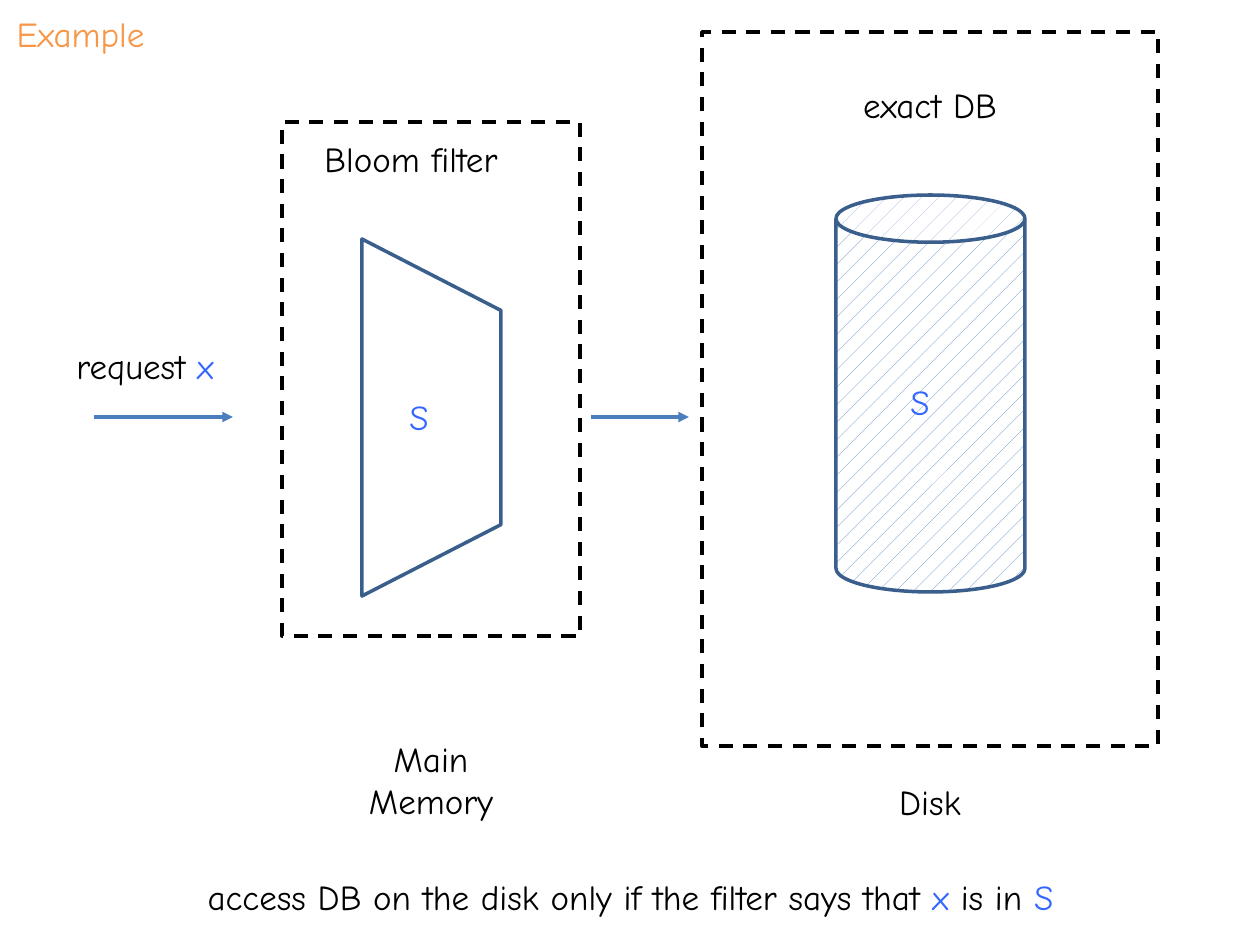
from dataclasses import dataclass
from typing import Optional

from lxml.etree import SubElement
from pptx import Presentation
from pptx.dml.color import RGBColor
from pptx.enum.dml import MSO_LINE, MSO_PATTERN
from pptx.enum.shapes import MSO_CONNECTOR, MSO_SHAPE
from pptx.enum.text import MSO_ANCHOR, MSO_AUTO_SIZE, PP_ALIGN
from pptx.oxml.ns import qn
from pptx.util import Emu, Pt

COLORS = {
    "title": "F79646",
    "text": "000000",
    "symbol": "3366FF",
    "arrow": "4B7EBC",
    "outline": "3A5F8C",
    "hatch": "4F81BD",
    "paper": "FFFFFF",
}
FONT = "Comic Neue"
FONT_SIZE = Pt(20)
LINE_WIDTH = Pt(2)
PX_PER_INCH = 126
ARROW_Y = 417


@dataclass(frozen=True)
class Box:
    x: int
    y: int
    w: int
    h: int


@dataclass(frozen=True)
class Label:
    box: Box
    runs: tuple[tuple[str, str], ...]
    align: PP_ALIGN = PP_ALIGN.CENTER


@dataclass(frozen=True)
class Figure:
    shape: MSO_SHAPE
    box: Box
    color: str
    dash: Optional[MSO_LINE] = None
    rotation: int = 0
    hatched: bool = False


@dataclass(frozen=True)
class Arrow:
    x1: int
    x2: int


FIGURES = (
    Figure(MSO_SHAPE.FLOWCHART_MANUAL_OPERATION, Box(253, 348, 357, 139), "outline", rotation=270),
    Figure(MSO_SHAPE.RECTANGLE, Box(282, 122, 298, 514), "text", MSO_LINE.DASH),
    Figure(MSO_SHAPE.RECTANGLE, Box(702, 32, 456, 714), "text", MSO_LINE.DASH),
    Figure(MSO_SHAPE.CAN, Box(836, 195, 189, 397), "outline", hatched=True),
)
ARROWS = (Arrow(94, 233), Arrow(591, 689))
TITLE = Label(Box(4, 6, 478, 55), (("Example", "title"),), PP_ALIGN.LEFT)
LABELS = (
    Label(Box(64, 338, 218, 55), (("request", "text"), (" x", "symbol")), PP_ALIGN.LEFT),
    Label(Box(397, 389, 69, 55), (("S", "symbol"),), PP_ALIGN.LEFT),
    Label(Box(898, 374, 69, 55), (("S", "symbol"),), PP_ALIGN.LEFT),
    Label(Box(302, 131, 218, 97), (("Bloom filter", "text"),)),
    Label(Box(322, 731, 218, 97), (("Main Memory", "text"),)),
    Label(Box(821, 774, 218, 55), (("Disk", "text"),)),
    Label(Box(821, 77, 218, 55), (("exact DB", "text"),)),
    Label(
        Box(25, 869, 1211, 55),
        (
            ("access DB on the disk only if the filter says that ", "text"),
            ("x ", "symbol"),
            ("is in ", "text"),
            ("S", "symbol"),
        ),
    ),
)


def px(n: int) -> Emu:
    return Emu(round(n * 914400 / PX_PER_INCH))


def bounds(box: Box) -> tuple[Emu, Emu, Emu, Emu]:
    return px(box.x), px(box.y), px(box.w), px(box.h)


def rgb(name: str) -> RGBColor:
    return RGBColor.from_string(COLORS[name])


def write(sp, label: Label) -> None:
    tf = sp.text_frame
    tf.word_wrap = True
    tf.auto_size = MSO_AUTO_SIZE.SHAPE_TO_FIT_TEXT
    tf.vertical_anchor = MSO_ANCHOR.TOP
    p = tf.paragraphs[0]
    p.alignment = label.align
    for text, color in label.runs:
        r = p.add_run()
        r.text = text
        r.font.name = FONT
        r.font.size = FONT_SIZE
        r.font.color.rgb = rgb(color)


def add_title(s, label: Label) -> None:
    sp = s.shapes.title
    sp.left, sp.top, sp.width, sp.height = bounds(label.box)
    write(sp, label)


def add_label(s, label: Label) -> None:
    write(s.shapes.add_textbox(*bounds(label.box)), label)


def add_figure(s, figure: Figure) -> None:
    sp = s.shapes.add_shape(figure.shape, *bounds(figure.box))
    sp.shadow.inherit = False
    sp.rotation = figure.rotation
    if figure.hatched:
        sp.fill.patterned()
        sp.fill.pattern = MSO_PATTERN.PERCENT_5
        sp.fill.fore_color.rgb = rgb("hatch")
        sp.fill.back_color.rgb = rgb("paper")
    else:
        sp.fill.background()
    sp.line.color.rgb = rgb(figure.color)
    sp.line.width = LINE_WIDTH
    if figure.dash is not None:
        sp.line.dash_style = figure.dash


def add_arrow(s, arrow: Arrow) -> None:
    y = px(ARROW_Y)
    cxn = s.shapes.add_connector(MSO_CONNECTOR.STRAIGHT, px(arrow.x1), y, px(arrow.x2), y)
    cxn.line.color.rgb = rgb("arrow")
    cxn.line.width = LINE_WIDTH
    SubElement(cxn.line._get_or_add_ln(), qn("a:tailEnd"), type="triangle")
    SubElement(cxn._element.spPr, qn("a:effectLst"))


def main() -> None:
    prs = Presentation()
    prs.slide_width, prs.slide_height = px(1260), px(945)
    s = prs.slides.add_slide(prs.slide_layouts[5])
    add_title(s, TITLE)
    for figure in FIGURES:
        add_figure(s, figure)
    for arrow in ARROWS:
        add_arrow(s, arrow)
    for label in LABELS:
        add_label(s, label)
    prs.save("out.pptx")


if __name__ == "__main__":
    main()
